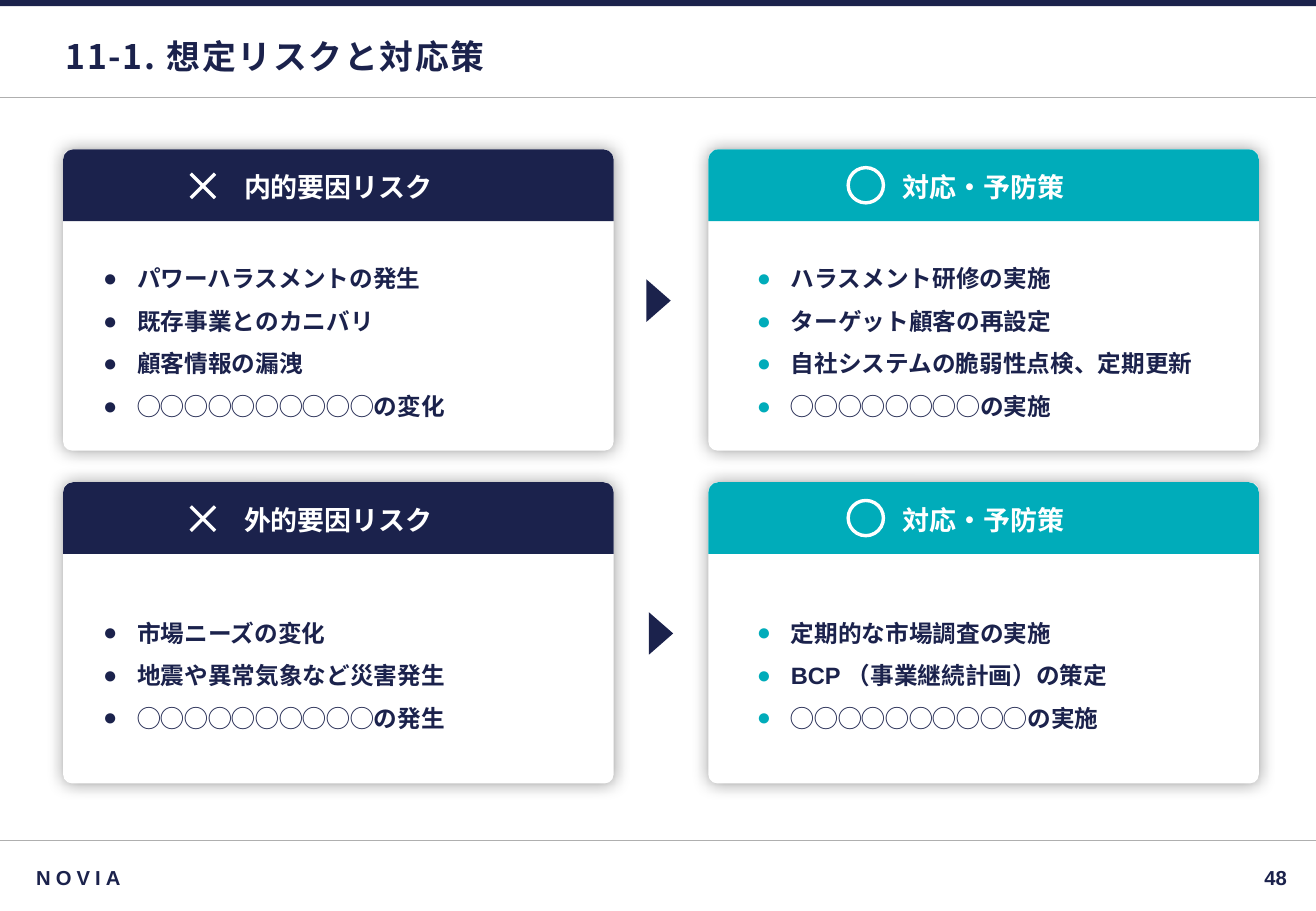
from dataclasses import dataclass

from lxml.etree import SubElement
from pptx import Presentation
from pptx.dml.color import RGBColor
from pptx.enum.shapes import MSO_CONNECTOR as Connector, MSO_SHAPE as Shape
from pptx.enum.text import MSO_ANCHOR as Anchor, PP_ALIGN as Align
from pptx.oxml.ns import qn
from pptx.util import Inches, Pt


@dataclass(frozen=True)
class Theme:
    navy: str = "1B224C"
    teal: str = "00ACBA"
    white: str = "FFFFFF"
    rule: str = "AFAFAF"
    shadow: str = "000000"
    font: str = "Arial"
    title_font: str = "Noto Sans CJK JP"
    title: int = 20
    heading: int = 16
    body: int = 14
    footer: int = 12


THEME = Theme()
WIDTH, HEIGHT = 10.83, 7.5
CARD_WIDTH, CARD_HEIGHT, HEADER_HEIGHT = 4.53, 2.48, 0.59
RISK_LEFT, MEASURE_LEFT = 0.52, 5.83

ROWS = [
    {
        "top": 1.23,
        "arrow_left": 5.32,
        "heading": "内的要因リスク",
        "risks": [
            "パワーハラスメントの発生",
            "既存事業とのカニバリ",
            "顧客情報の漏洩",
            "◯◯◯◯◯◯◯◯◯◯の変化",
        ],
        "measures": [
            "ハラスメント研修の実施",
            "ターゲット顧客の再設定",
            "自社システムの脆弱性点検、定期更新",
            "◯◯◯◯◯◯◯◯の実施",
        ],
    },
    {
        "top": 3.97,
        "arrow_left": 5.34,
        "heading": "外的要因リスク",
        "risks": [
            "市場ニーズの変化",
            "地震や異常気象など災害発生",
            "◯◯◯◯◯◯◯◯◯◯の発生",
        ],
        "measures": [
            "定期的な市場調査の実施",
            "BCP （事業継続計画）の策定",
            "◯◯◯◯◯◯◯◯◯◯の実施",
        ],
    },
]


def apply(target, values):
    for name, value in values.items():
        setattr(target, name, value)


def inches(*lengths):
    return [Inches(length) for length in lengths]


def paint(shape, color):
    shape.shadow.inherit = False
    shape.line.fill.background()
    shape.fill.solid()
    shape.fill.fore_color.rgb = RGBColor.from_string(color)
    return shape


def add_block(page, kind, box, color, corners=()):
    shape = page.shapes.add_shape(kind, *inches(*box))
    for index, corner in enumerate(corners):
        shape.adjustments[index] = corner
    return paint(shape, color)


def add_rule(page, start, end, color, width):
    rule = page.shapes.add_connector(Connector.STRAIGHT, *inches(*start, *end))
    rule.line.color.rgb = RGBColor.from_string(color)
    rule.line.width = Pt(width)
    SubElement(rule.element.spPr, qn("a:effectLst"))


def set_frame(frame, inset_x, inset_y):
    apply(frame, {
        "word_wrap": True,
        "vertical_anchor": Anchor.MIDDLE,
        "margin_left": Inches(inset_x),
        "margin_right": Inches(inset_x),
        "margin_top": Inches(inset_y),
        "margin_bottom": Inches(inset_y),
    })


def write(para, text, size, color, align=Align.LEFT, font=THEME.font, spacing=0):
    para.alignment = align
    span = para.add_run()
    span.text = text
    apply(span.font, {"size": Pt(size), "bold": True, "name": font})
    span.font.color.rgb = RGBColor.from_string(color)
    props = span.font._element
    SubElement(props, qn("a:ea"), typeface=font)
    if spacing:
        props.set("spc", str(spacing * 100))


def add_label(page, box, inset_x, inset_y, text, size, **style):
    frame = page.shapes.add_textbox(*inches(*box)).text_frame
    set_frame(frame, inset_x, inset_y)
    write(frame.paragraphs[0], text, size, THEME.navy, **style)


def add_bullets(page, box, inset_x, inset_y, items, color):
    frame = page.shapes.add_textbox(*inches(*box)).text_frame
    set_frame(frame, inset_x, inset_y)
    for index, item in enumerate(items):
        para = frame.add_paragraph() if index else frame.paragraphs[0]
        write(para, item, THEME.body, THEME.navy)
        para.line_spacing = 1.5
        props = para._p.get_or_add_pPr()
        props.set("marL", str(Inches(0.28)))
        props.set("indent", str(Inches(-0.28)))
        tint = SubElement(props, qn("a:buClr"))
        SubElement(tint, qn("a:srgbClr"), val=color)
        SubElement(props, qn("a:buFont"), typeface=THEME.font)
        SubElement(props, qn("a:buChar"), char="●")


def add_card(page, left, top, heading, color, corner):
    panel = add_block(page, Shape.ROUNDED_RECTANGLE,
                      (left, top, CARD_WIDTH, CARD_HEIGHT), THEME.white, [corner])
    effects = panel.element.spPr.find(qn("a:effectLst"))
    glow = SubElement(effects, qn("a:outerShdw"), blurRad=str(Pt(10)),
                      dist="0", dir="0", algn="ctr", rotWithShape="0")
    shade = SubElement(glow, qn("a:srgbClr"), val=THEME.shadow)
    SubElement(shade, qn("a:alpha"), val="40000")
    header = add_block(page, Shape.ROUND_2_SAME_RECTANGLE,
                       (left, top, CARD_WIDTH, HEADER_HEIGHT), color, [0.14, 0])
    set_frame(header.text_frame, 0.08, 0.08)
    write(header.text_frame.paragraphs[0], heading, THEME.heading, THEME.white, Align.CENTER)


def add_risk_card(page, left, top, heading, items):
    add_card(page, left, top, heading, THEME.navy, 0.03)
    x, y, side = left + 1.05, top + 0.2, 0.2
    add_rule(page, (x, y), (x + side, y + side), THEME.white, 2)
    add_rule(page, (x + side, y), (x, y + side), THEME.white, 2)
    add_bullets(page, (left + 0.29, top + 0.78, 3.94, 1.5), 0.04, 0.04, items, THEME.navy)


def add_measure_card(page, left, top, items):
    add_card(page, left, top, "対応・予防策", THEME.teal, 0.03)
    ring = page.shapes.add_shape(Shape.OVAL, *inches(left + 1.15, top + 0.15, 0.29, 0.29))
    ring.shadow.inherit = False
    ring.fill.background()
    ring.line.color.rgb = RGBColor.from_string(THEME.white)
    ring.line.width = Pt(2)
    add_bullets(page, (left + 0.3, top + 0.78, 3.94, 1.5), 0.1, 0.05, items, THEME.teal)


def add_arrow(page, left, top, width=0.2, height=0.35):
    builder = page.shapes.build_freeform(*inches(left, top))
    builder.add_line_segments([
        inches(left + width, top + height / 2),
        inches(left, top + height),
    ])
    paint(builder.convert_to_shape(), THEME.navy)


def add_header(page):
    add_block(page, Shape.RECTANGLE, (0, 0, WIDTH, 0.05), THEME.navy)
    add_rule(page, (0, 0.8), (WIDTH, 0.8), THEME.rule, 0.75)
    add_label(page, (0.5, 0.21, 9.84, 0.51), 0.04, 0.04, "11-1. 想定リスクと対応策",
              THEME.title, font=THEME.title_font, spacing=1)


def add_footer(page, top):
    add_rule(page, (0, top), (WIDTH, top), THEME.rule, 0.75)
    add_label(page, (0.2, top + 0.15, 8.66, 0.31), 0.1, 0.05, "NOVIA", THEME.footer, spacing=3)
    add_label(page, (9.06, top + 0.15, 1.57, 0.31), 0.04, 0.04, "48", THEME.footer,
              align=Align.RIGHT)


def main():
    deck = Presentation()
    apply(deck, {"slide_width": Inches(WIDTH), "slide_height": Inches(HEIGHT)})
    page = deck.slides.add_slide(deck.slide_layouts[6])
    add_header(page)
    for row in ROWS:
        add_risk_card(page, RISK_LEFT, row["top"], row["heading"], row["risks"])
        add_arrow(page, row["arrow_left"], row["top"] + 1.07)
        add_measure_card(page, MEASURE_LEFT, row["top"], row["measures"])
    add_footer(page, 6.92)
    deck.save("out.pptx")


if __name__ == "__main__":
    main()
